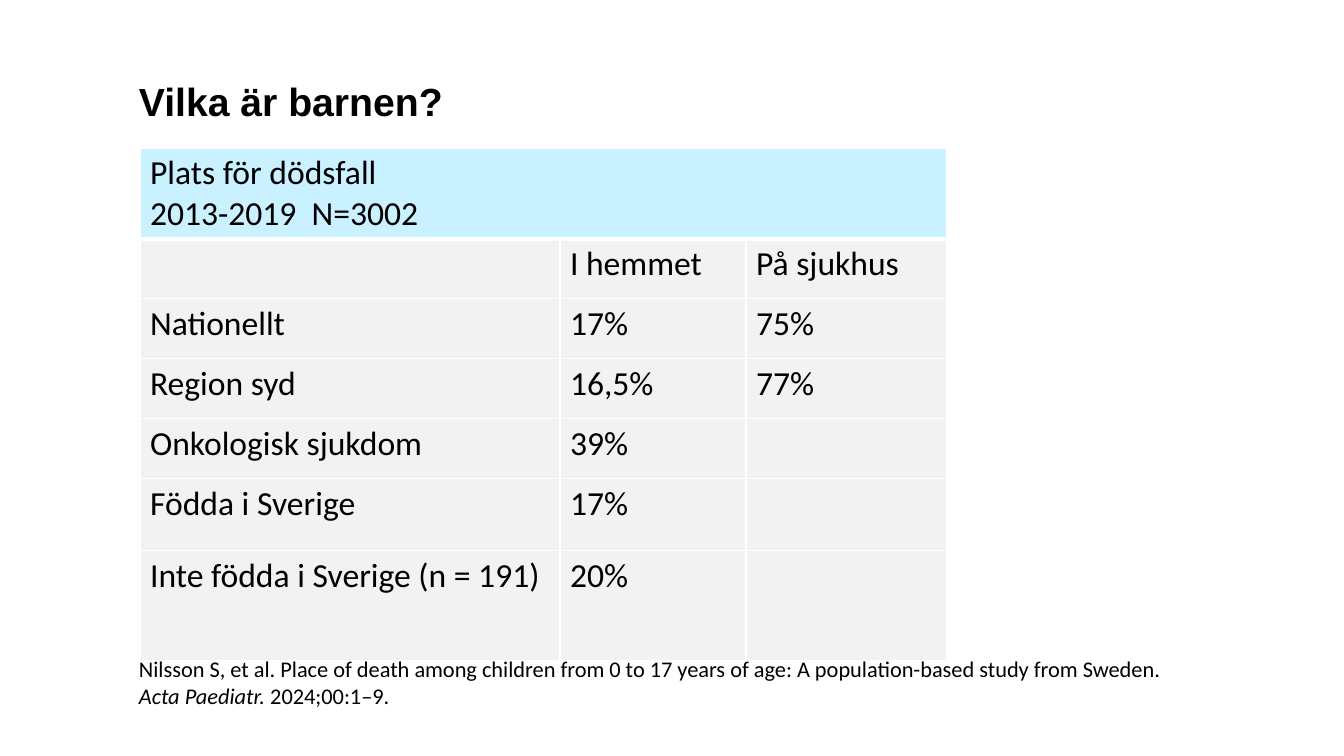
from lxml import etree
from pptx import Presentation
from pptx.dml.color import RGBColor
from pptx.enum.text import MSO_ANCHOR
from pptx.oxml.ns import qn
from pptx.util import Pt

PX = 914400 / 100.8
BLACK, WHITE, SKY, GREY = "000000", "FFFFFF", "CAF1FF", "F2F2F2"


def px(length):
    return round(length * PX)


def style(item, size, face="Calibri", bold=False):
    """Set the font of every paragraph in a text frame."""
    for paragraph in item.paragraphs:
        font = paragraph.font
        font.name, font.size, font.bold = face, Pt(size), bold
        font.color.rgb = RGBColor.from_string(BLACK)


prs = Presentation()
prs.slide_width, prs.slide_height = px(1344), px(756)
slide = prs.slides.add_slide(prs.slide_layouts[6])

# Heading
heading = slide.shapes.add_textbox(px(129), px(63), px(1088), px(75)).text_frame
heading.word_wrap = True
heading.vertical_anchor = MSO_ANCHOR.MIDDLE
heading.text = "Vilka är barnen?"
style(heading, 28, "Arial", True)

# Place of death
places = [
    ("Plats för dödsfall\n2013-2019  N=3002", "", ""),
    ("", "I hemmet", "På sjukhus"),
    ("Nationellt", "17%", "75%"),
    ("Region syd", "16,5%", "77%"),
    ("Onkologisk sjukdom", "39%", ""),
    ("Födda i Sverige", "17%", ""),
    ("Inte födda i Sverige (n = 191)", "20%", ""),
]
widths = [420, 186, 201]
heights = [78, 60, 60, 60, 60, 72, 110]

table = slide.shapes.add_table(len(places), len(widths), px(140), px(148),
                               px(sum(widths)), px(sum(heights))).table
table.first_row = table.horz_banding = False
for column, width in zip(table.columns, widths):
    column.width = px(width)
for row, height in zip(table.rows, heights):
    row.height = px(height)
table.cell(0, 0).merge(table.cell(0, 2))

for r, values in enumerate(places):
    for c, value in enumerate(values):
        cell = table.cell(r, c)
        cell.text = value
        style(cell.text_frame, 24)
        properties = cell._tc.get_or_add_tcPr()
        for side in ("a:lnL", "a:lnR", "a:lnT", "a:lnB"):
            points = 3 if r == 0 and side == "a:lnB" else 1
            border = etree.SubElement(properties, qn(side), w=str(Pt(points)))
            paint = etree.SubElement(border, qn("a:solidFill"))
            etree.SubElement(paint, qn("a:srgbClr"), val=WHITE)
        cell.fill.solid()
        cell.fill.fore_color.rgb = RGBColor.from_string(SKY if r == 0 else GREY)

# Reference
reference = slide.shapes.add_textbox(px(129), px(650), px(1070), px(95)).text_frame
reference.word_wrap = True
citation = reference.paragraphs[0]
for text, italic in [
    ("Nilsson S, et al. Place of death among children from 0 to 17 years of age: "
     "A population-based study from Sweden. ", False),
    ("Acta Paediatr.", True),
    (" 2024;00:1–9.", False),
]:
    run = citation.add_run()
    run.text = text
    run.font.italic = italic
style(reference, 16)

prs.save("out.pptx")
